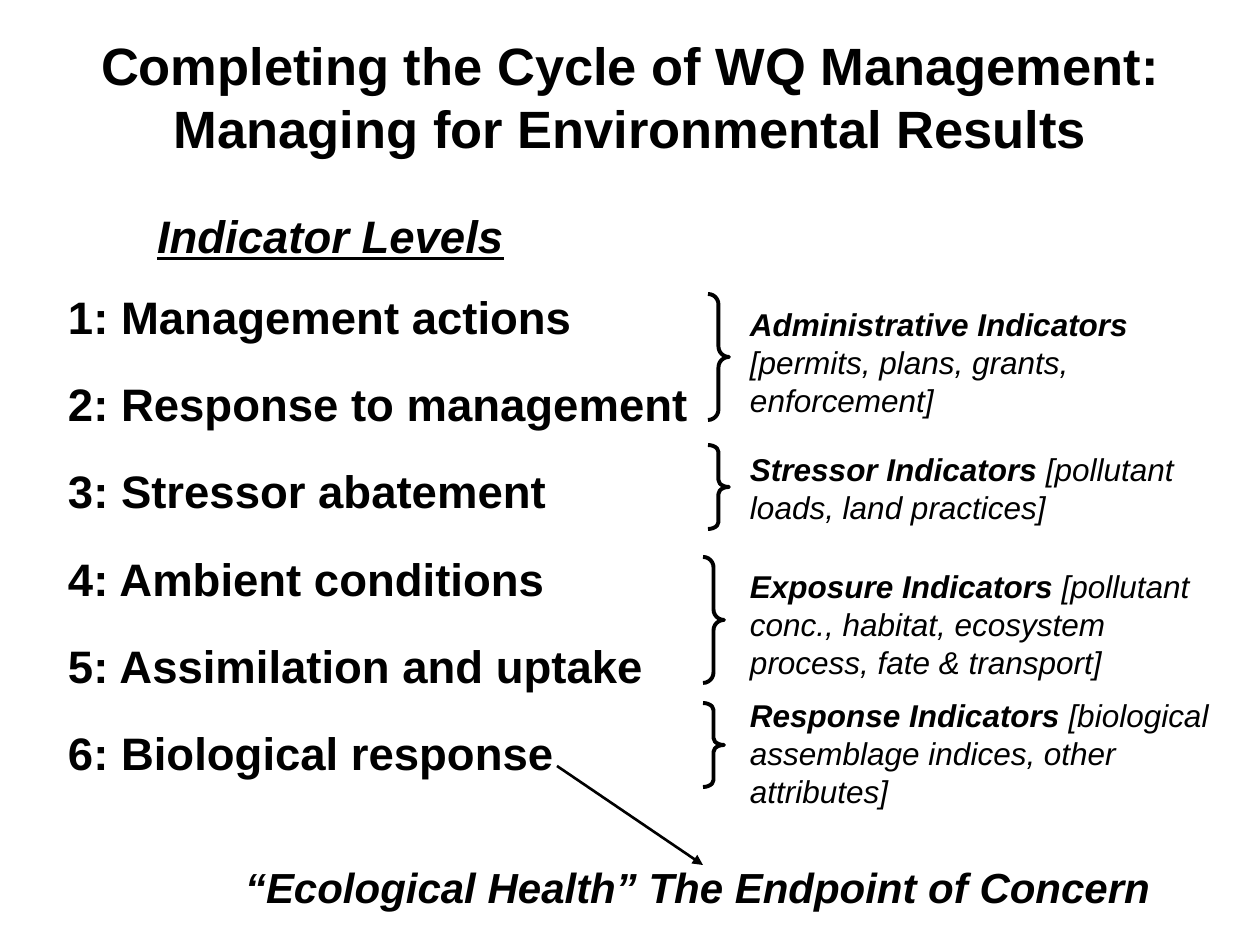
import pptx
import pptx.util
import pptx.dml.color
import pptx.enum.shapes
import pptx.enum.text
import pptx.oxml
import pptx.oxml.ns

PX = 914400 / 126  # EMU per px
BLACK = "000000"


def px(n):
    return pptx.util.Emu(round(n * PX))


def color(value):
    return pptx.dml.color.RGBColor.from_string(value)


class Deck:
    """Holds the style and the current slide."""

    font = {"name": "Arial", "bold": True, "italic": False, "underline": False}

    def __init__(self, width, height):
        self.prs = pptx.Presentation()
        self.prs.slide_width, self.prs.slide_height = px(width), px(height)

    def new_slide(self):
        self.s = self.prs.slides.add_slide(self.prs.slide_layouts[5])

    def format_run(self, r, size, **changes):
        values = {**self.font, "size": pptx.util.Pt(size), **changes}
        for name, value in values.items():
            setattr(r.font, name, value)
        r.font.color.rgb = color(BLACK)

    def fill_frame(self, tf, paragraphs, size, spacing=1.0, align="LEFT", wrap=True):
        """Each paragraph is a list of (text, font changes) pairs."""
        settings = {"word_wrap": wrap, "margin_left": 0, "margin_right": 0,
                    "margin_top": 0, "margin_bottom": 0,
                    "auto_size": pptx.enum.text.MSO_AUTO_SIZE.NONE,
                    "vertical_anchor": pptx.enum.text.MSO_ANCHOR.TOP}
        for name, value in settings.items():
            setattr(tf, name, value)
        for i, runs in enumerate(paragraphs):
            p = tf.add_paragraph() if i else tf.paragraphs[0]
            p.alignment = getattr(pptx.enum.text.PP_ALIGN, align)
            p.line_spacing = spacing
            for text, changes in runs:
                r = p.add_run()
                r.text = text
                self.format_run(r, size, **changes)

    def title(self, box, text, size):
        sp = self.s.shapes.title
        sp.left, sp.top, sp.width, sp.height = map(px, box)
        self.fill_frame(sp.text_frame, [[(text, {})]], size, align="CENTER")

    def text(self, box, paragraphs, size, **layout):
        sp = self.s.shapes.add_textbox(*map(px, box))
        self.fill_frame(sp.text_frame, paragraphs, size, **layout)

    def brace(self, box, radius):
        shape = pptx.enum.shapes.MSO_SHAPE.RIGHT_BRACE
        sp = self.s.shapes.add_shape(shape, *map(px, box))
        sp.shadow.inherit = False
        sp.fill.background()
        sp.line.color.rgb = color(BLACK)
        sp.line.width = pptx.util.Pt(2.25)
        sp.adjustments[0] = radius

    def arrow(self, start, end, width):
        straight = pptx.enum.shapes.MSO_CONNECTOR.STRAIGHT
        sp = self.s.shapes.add_connector(straight, *map(px, start + end))
        sp.line.color.rgb = color(BLACK)
        sp.line.width = pptx.util.Pt(width)
        head = pptx.oxml.parse_xml(
            f'<a:tailEnd {pptx.oxml.ns.nsdecls("a")} type="triangle"/>')
        sp.line._get_or_add_ln().append(head)
        effects = pptx.oxml.parse_xml(f'<a:effectLst {pptx.oxml.ns.nsdecls("a")}/>')
        sp._element.spPr.append(effects)


LEVELS = ["Management actions", "Response to management", "Stressor abatement",
          "Ambient conditions", "Assimilation and uptake", "Biological response"]

# Name, examples, brace (left, top, height, radius), note (top, width, height)
GROUPS = [
    ("Administrative Indicators", "[permits, plans, grants, enforcement]",
     (708, 294, 126, 0.5), (305, 483, 114)),
    ("Stressor Indicators", "[pollutant loads, land practices]",
     (708, 445, 84, 0.33), (450, 483, 76)),
    ("Exposure Indicators",
     "[pollutant conc., habitat, ecosystem process, fate & transport]",
     (703, 557, 126, 0.5), (567, 483, 114)),
    ("Response Indicators", "[biological assemblage indices, other attributes]",
     (703, 703, 84, 0.33), (696, 504, 114)),
]


def main():
    deck = Deck(1260, 945)
    deck.new_slide()
    italic = {"italic": True}

    # Title and heading
    deck.title((53, 33, 1155, 127),
               "Completing the Cycle of WQ Management: "
               "Managing for Environmental Results", 30)
    deck.text((157, 208, 347, 54),
              [[("Indicator Levels", {"italic": True, "underline": True})]],
              26, wrap=False)

    # Numbered levels
    deck.text((68, 256, 630, 525),
              [[(f"{n}: {level}", {})] for n, level in enumerate(LEVELS, 1)],
              26, spacing=1.6)

    # Indicator groups with their braces
    for name, examples, (left, top, height, radius), (y, w, h) in GROUPS:
        deck.brace((left, top, 21, height), radius)
        deck.text((750, y, w, h),
                  [[(name + " ", italic),
                    (examples, {"italic": True, "bold": False})]], 18)

    # Endpoint
    deck.arrow((557, 766), (703, 865), 1.5)
    deck.text((245, 862, 939, 50),
              [[("“Ecological Health” The Endpoint of Concern", italic)]],
              24, wrap=False)

    deck.prs.save("out.pptx")


if __name__ == "__main__":
    main()
